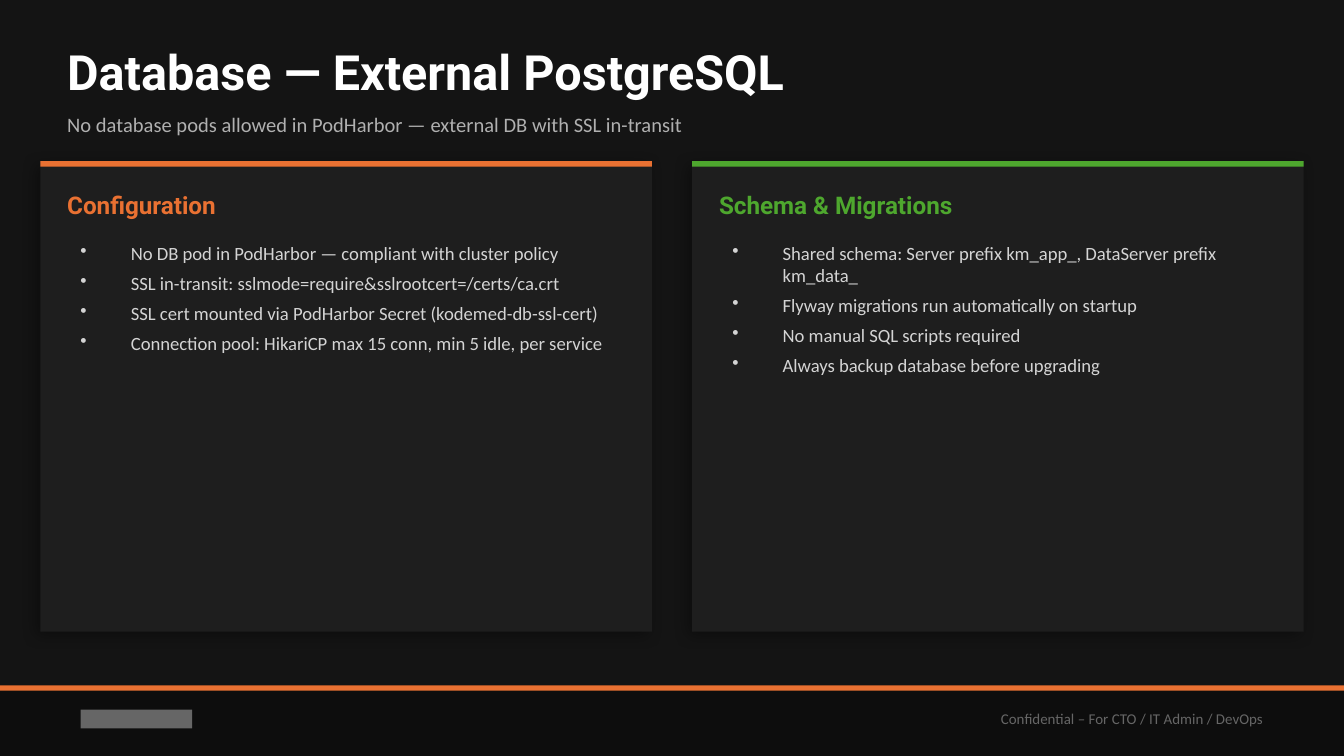
from lxml import etree
from pptx import Presentation
from pptx import util as u
from pptx.dml.color import RGBColor
from pptx.enum import shapes, text
from pptx.oxml.ns import qn

PX = 4572  # EMU per px, 200 px to the inch
WIDE, HIGH = 2000, 1125
HEAD, BODY = "Roboto", "Calibri"
WHITE, ORANGE, GREEN = "FFFFFF", "E97132", "4EA72E"
GREY, DIM, PALE = "666666", "B0B0B0", "D4D4D4"
PANEL, FOOT, BACK = "1E1E1E", "0D0D0D", "141414"
TOP, STRIPE, CARD_W, CARD_H, PAD = 240, 8, 910, 700, 40

CARDS = [
    (60, ORANGE, "Configuration", [
        "No DB pod in PodHarbor — compliant with cluster policy",
        "SSL in-transit: sslmode=require&sslrootcert=/certs/ca.crt",
        "SSL cert mounted via PodHarbor Secret (kodemed-db-ssl-cert)",
        "Connection pool: HikariCP max 15 conn, min 5 idle, per service",
    ]),
    (1030, GREEN, "Schema & Migrations", [
        "Shared schema: Server prefix km_app_, DataServer prefix km_data_",
        "Flyway migrations run automatically on startup",
        "No manual SQL scripts required",
        "Always backup database before upgrading",
    ]),
]


def px(*sizes):
    return [u.Emu(size * PX) for size in sizes]


def color(code):
    return RGBColor.from_string(code)


def rect(slide, box, fill):
    shape = slide.shapes.add_shape(shapes.MSO_SHAPE.RECTANGLE, *px(*box))
    shape.shadow.inherit = False
    shape.fill.solid()
    shape.fill.fore_color.rgb = color(fill)
    shape.line.fill.background()
    return shape


def shade(shape):
    """Give the shape a soft outer shadow."""
    effects = shape._element.spPr.find(qn("a:effectLst"))
    outer = etree.SubElement(
        effects, qn("a:outerShdw"), blurRad=str(u.Pt(8)), dist=str(u.Pt(3)),
        dir=str(135 * 60000), algn="bl", rotWithShape="0")
    tone = etree.SubElement(outer, qn("a:srgbClr"), val="000000")
    etree.SubElement(tone, qn("a:alpha"), val="35000")


def frame(slide, box, inset=True, anchor=text.MSO_ANCHOR.MIDDLE):
    body = slide.shapes.add_textbox(*px(*box)).text_frame
    body.word_wrap = True
    body.vertical_anchor = anchor
    if not inset:
        body.margin_left = body.margin_right = 0
        body.margin_top = body.margin_bottom = 0
    return body


def add_run(para, words, size, face, tint, bold=False):
    run = para.add_run()
    run.text = words
    run.font.size = u.Pt(size)
    run.font.name = face
    run.font.bold = bold
    run.font.color.rgb = color(tint)


def line(slide, box, *style):
    """Add one line of text in a box without insets."""
    add_run(frame(slide, box, inset=False).paragraphs[0], *style)


def bullets(slide, box, items):
    body = frame(slide, box, anchor=text.MSO_ANCHOR.TOP)
    for i, item in enumerate(items):
        para = body.add_paragraph() if i else body.paragraphs[0]
        props = para._p.get_or_add_pPr()
        props.set("marL", str(75 * PX))
        props.set("indent", str(-75 * PX))
        etree.SubElement(props, qn("a:buChar"), char="•")
        para.space_after = u.Pt(4)
        para.font.size = u.Pt(10)
        add_run(para, item, 10, BODY, PALE)


def card(slide, left, tint, title, items):
    shade(rect(slide, (left, TOP, CARD_W, CARD_H), PANEL))
    rect(slide, (left, TOP, CARD_W, STRIPE), tint)
    inner, width = left + PAD, CARD_W - 2 * PAD
    line(slide, (inner, TOP + 30, width, 70), title, 13, HEAD, tint, True)
    bullets(slide, (inner, TOP + 110, width, 560), items)


def footer(slide):
    rect(slide, (0, 1020, WIDE, HIGH - 1020), FOOT)
    rect(slide, (0, 1020, WIDE, STRIPE), ORANGE)
    rect(slide, (120, 1056, 166, 28), GREY)
    note = frame(slide, (1100, 1030, 800, 80)).paragraphs[0]
    note.alignment = text.PP_ALIGN.RIGHT
    add_run(note, "Confidential – For CTO / IT Admin / DevOps", 8, BODY, GREY)


def main():
    deck = Presentation()
    deck.slide_width, deck.slide_height = px(WIDE, HIGH)
    slide = deck.slides.add_slide(deck.slide_layouts[6])
    slide.background.fill.solid()
    slide.background.fill.fore_color.rgb = color(BACK)
    footer(slide)
    line(slide, (100, 50, 1800, 110),
         "Database — External PostgreSQL", 26, HEAD, WHITE, True)
    line(slide, (100, 150, 1800, 70),
         "No database pods allowed in PodHarbor — external DB with SSL in-transit",
         11, BODY, DIM)
    for entry in CARDS:
        card(slide, *entry)
    deck.save("out.pptx")


if __name__ == "__main__":
    main()
